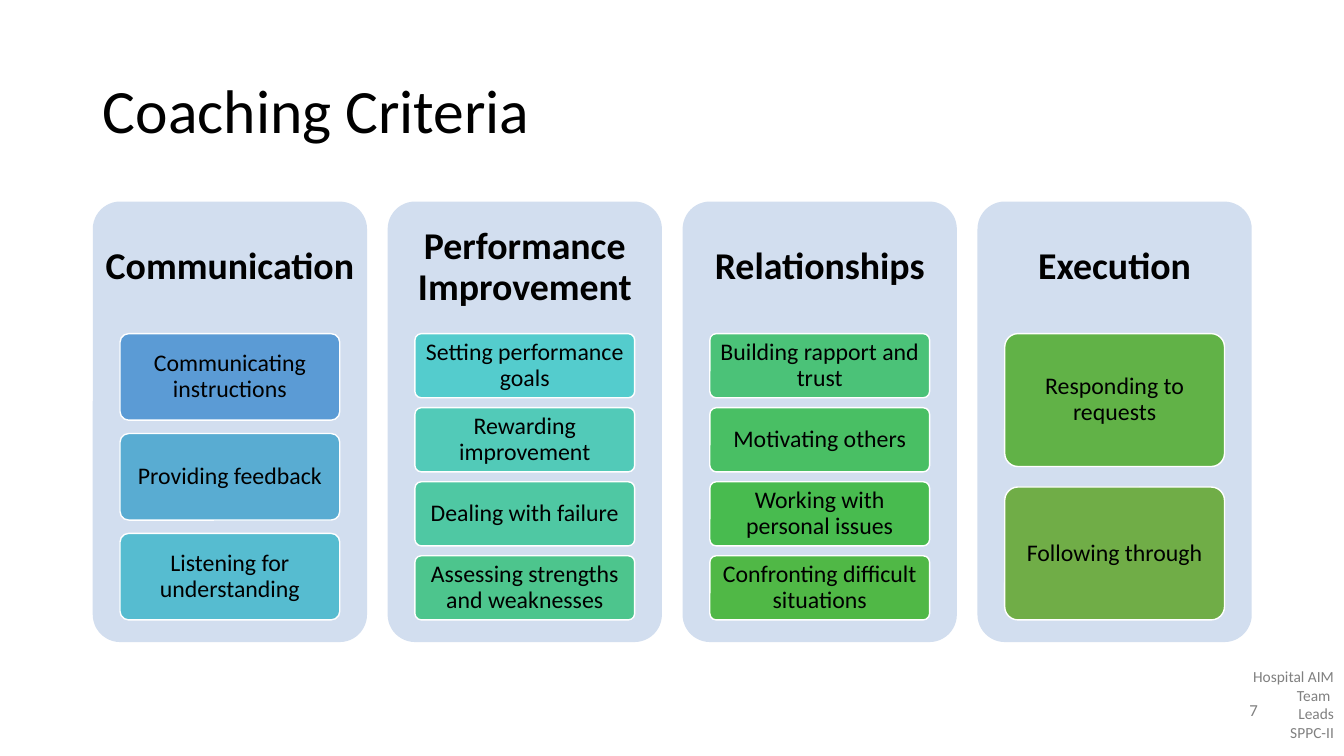
from pptx import Presentation
from pptx.dml.color import RGBColor
from pptx.enum import shapes, text
from pptx.util import Inches, Pt

FONT = "Calibri"
BLACK = RGBColor(0x00, 0x00, 0x00)
WHITE = RGBColor(0xFF, 0xFF, 0xFF)
GRAY = RGBColor(0x80, 0x80, 0x80)
PANEL_BLUE = RGBColor(0xD2, 0xDE, 0xEF)

# Each column: heading, then (criterion, card colour)
COLUMNS = [
    ("Communication", [
        ("Communicating instructions", RGBColor(0x5B, 0x9B, 0xD5)),
        ("Providing feedback", RGBColor(0x59, 0xAC, 0xD2)),
        ("Listening for understanding", RGBColor(0x56, 0xBC, 0xD0)),
    ]),
    ("Performance Improvement", [
        ("Setting performance goals", RGBColor(0x54, 0xCC, 0xCD)),
        ("Rewarding improvement", RGBColor(0x52, 0xCA, 0xB8)),
        ("Dealing with failure", RGBColor(0x4F, 0xC8, 0xA3)),
        ("Assessing strengths and weaknesses", RGBColor(0x4D, 0xC5, 0x8D)),
    ]),
    ("Relationships", [
        ("Building rapport and trust", RGBColor(0x4B, 0xC2, 0x78)),
        ("Motivating others", RGBColor(0x49, 0xBF, 0x64)),
        ("Working with personal issues", RGBColor(0x48, 0xBB, 0x4F)),
        ("Confronting difficult situations", RGBColor(0x50, 0xB8, 0x46)),
    ]),
    ("Execution", [
        ("Responding to requests", RGBColor(0x61, 0xB2, 0x47)),
        ("Following through", RGBColor(0x70, 0xAD, 0x47)),
    ]),
]

# Column and card layout, in inches
COLUMN_LEFT, COLUMN_TOP, COLUMN_PITCH = 0.92, 2, 2.925
COLUMN_WIDTH, COLUMN_HEIGHT, HEADING_HEIGHT = 2.72, 4.37, 1.31
CARD_INDENT, CARD_WIDTH, CARDS_HEIGHT = 0.27, 2.18, 2.84
GAP_RATIO = 2 / 13  # gap between cards relative to card height


def set_text(shape, content, size, color=BLACK, align=text.PP_ALIGN.CENTER,
             anchor=text.MSO_ANCHOR.MIDDLE, spacing=0.9, bold=False):
    frame = shape.text_frame
    frame.text = content
    frame.word_wrap = True
    frame.vertical_anchor = anchor
    for paragraph in frame.paragraphs:
        paragraph.alignment = align
        paragraph.line_spacing = spacing
        for run in paragraph.runs:
            run.font.name = FONT
            run.font.size = Pt(size)
            run.font.bold = bold
            run.font.color.rgb = color


def set_margins(shape, horizontal, vertical):
    frame = shape.text_frame
    frame.margin_left = frame.margin_right = Inches(horizontal)
    frame.margin_top = frame.margin_bottom = Inches(vertical)


def add_text_box(slide, left, top, width, height, content, size, **style):
    box = slide.shapes.add_textbox(
        Inches(left), Inches(top), Inches(width), Inches(height))
    set_text(box, content, size, **style)
    return box


def add_rounded(slide, left, top, width, height, fill):
    shape = slide.shapes.add_shape(
        shapes.MSO_SHAPE.ROUNDED_RECTANGLE,
        Inches(left), Inches(top), Inches(width), Inches(height))
    shape.adjustments[0] = 0.1
    shape.shadow.inherit = False
    shape.fill.solid()
    shape.fill.fore_color.rgb = fill
    shape.line.fill.background()
    return shape


def add_card(slide, left, top, height, content, fill):
    card = add_rounded(slide, left, top, CARD_WIDTH, height, fill)
    card.line.color.rgb = WHITE
    card.line.width = Pt(1)
    set_margins(card, 0.05, 0.04)
    set_text(card, content, 17)


def add_column(slide, left, heading, cards):
    add_rounded(slide, left, COLUMN_TOP, COLUMN_WIDTH, COLUMN_HEIGHT, PANEL_BLUE)
    box = add_text_box(slide, left, COLUMN_TOP, COLUMN_WIDTH, HEADING_HEIGHT,
                       heading, 27, bold=True)
    set_margins(box, 0.11, 0.11)
    # Cards share the space below the heading equally
    count = len(cards)
    height = CARDS_HEIGHT / (count + (count - 1) * GAP_RATIO)
    for row, (content, fill) in enumerate(cards):
        top = COLUMN_TOP + HEADING_HEIGHT + row * height * (1 + GAP_RATIO)
        add_card(slide, left + CARD_INDENT, top, height, content, fill)


def add_title(slide, content):
    title = slide.shapes.title
    title.left, title.top = Inches(0.92), Inches(0.4)
    title.width, title.height = Inches(11.5), Inches(1.45)
    set_text(title, content, 44, align=text.PP_ALIGN.LEFT)


def main():
    presentation = Presentation()
    presentation.slide_width = Inches(13.33)
    presentation.slide_height = Inches(7.5)
    slide = presentation.slides.add_slide(presentation.slide_layouts[5])

    add_title(slide, "Coaching Criteria")
    for index, (heading, cards) in enumerate(COLUMNS):
        add_column(slide, COLUMN_LEFT + index * COLUMN_PITCH, heading, cards)

    # Footer and page number
    add_text_box(slide, 12.17, 6.57, 1.16, 0.84,
                 "Hospital AIM Team \nLeads\nSPPC-II", 11, color=GRAY,
                 align=text.PP_ALIGN.RIGHT, anchor=text.MSO_ANCHOR.TOP, spacing=1.0)
    add_text_box(slide, 12.2, 6.84, 0.47, 0.4, "7", 12, color=GRAY, spacing=1.0)

    presentation.save("out.pptx")


if __name__ == "__main__":
    main()
